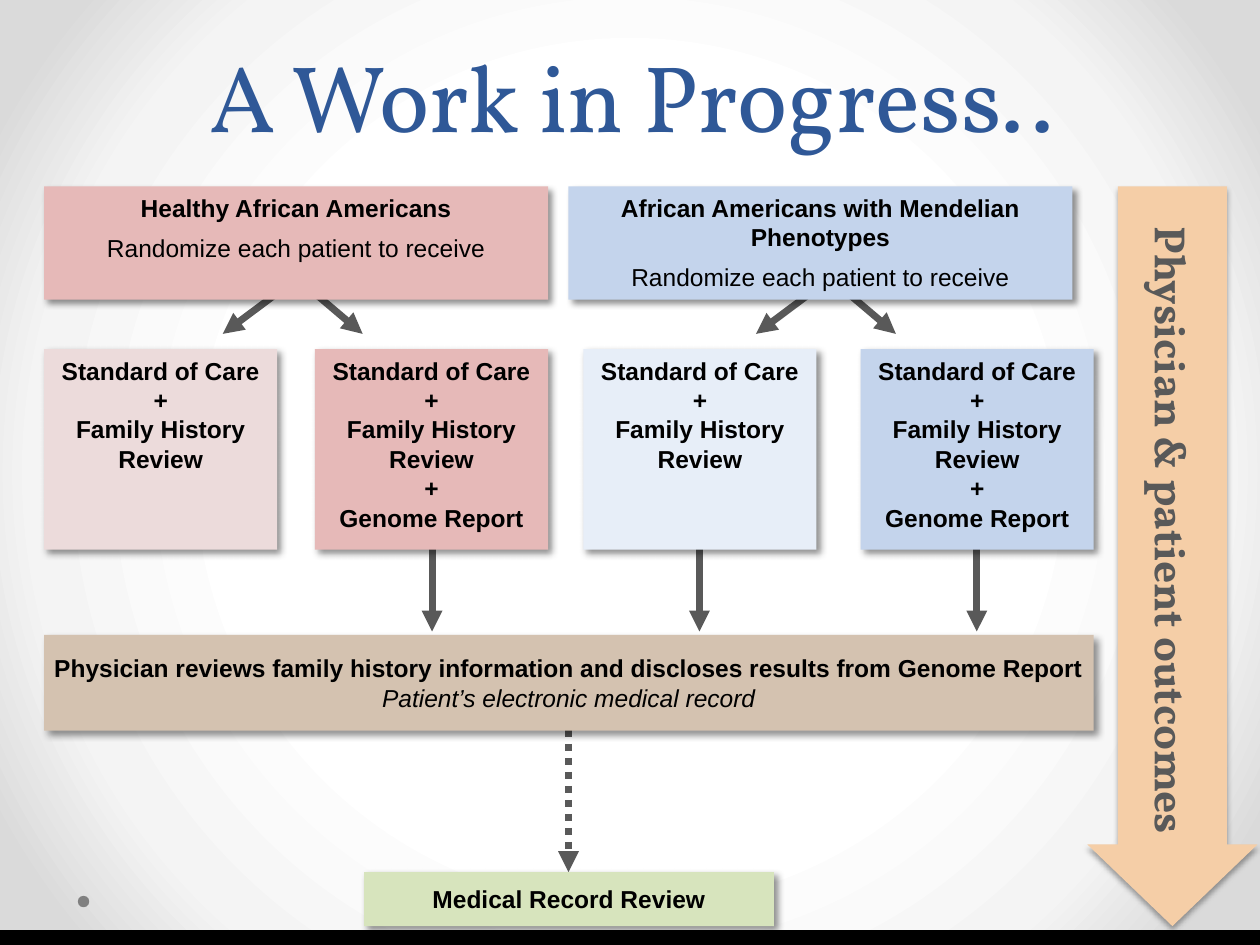
from lxml.etree import SubElement
from pptx import Presentation
from pptx.dml.color import RGBColor
from pptx.enum.dml import MSO_LINE
from pptx.enum.shapes import MSO_CONNECTOR, MSO_SHAPE as SHAPE
from pptx.enum.text import MSO_ANCHOR as ANCHOR, PP_ALIGN
from pptx.oxml.ns import qn
from pptx.util import Cm, Pt

INK, GREY = "000000", "595959"
ROSE, BLUE = "E6B9B8", "C4D4EC"
LEFT = 0.89
GROUP_W, GROUP_TOP, GROUP_H = 10.16, 3.76, 2.28
CARE_W, CARE_TOP, CARE_H = 4.7, 7.04, 4.04
REVIEW_TOP = 12.8
CARE = ["Standard of Care", "+", "Family History Review"]
CARE_GENOME = CARE + ["+", "Genome Report"]
RANDOMIZE = "Randomize each patient to receive"


def color(value):
    return RGBColor.from_string(value)


def add_background(s, stops):
    """Fill the slide with a gradient that spreads from its centre."""
    s.background.fill.solid()
    bg = s.element.find(".//" + qn("p:bgPr"))
    bg.remove(bg[0])
    grad = SubElement(bg, qn("a:gradFill"), rotWithShape="1")
    bg.insert(0, grad)
    gs_list = SubElement(grad, qn("a:gsLst"))
    for percent, value in stops:
        gs = SubElement(gs_list, qn("a:gs"), pos=str(percent * 1000))
        SubElement(gs, qn("a:srgbClr"), val=value)
    centre = SubElement(grad, qn("a:path"), path="circle")
    SubElement(centre, qn("a:fillToRect"), l="50000", t="50000", r="50000", b="50000")


def add_shadow(sp, opacity=43, blur=4, distance=3, angle=45):
    effects = sp._element.spPr.find(qn("a:effectLst"))
    shadow = SubElement(effects, qn("a:outerShdw"), blurRad=str(Pt(blur)),
                        dist=str(Pt(distance)), dir=str(angle * 60000),
                        algn="ctr", rotWithShape="0")
    clr = SubElement(shadow, qn("a:srgbClr"), val=INK)
    SubElement(clr, qn("a:alpha"), val=str(opacity * 1000))


def add_shape(s, bounds, fill, kind=SHAPE.RECTANGLE):
    sp = s.shapes.add_shape(kind, *map(Cm, bounds))
    sp.shadow.inherit = False
    sp.fill.solid()
    sp.fill.fore_color.rgb = color(fill)
    sp.line.fill.background()
    return sp


def format_run(r, size=14, name="Arial", value=INK, bold=True):
    r.font.size, r.font.name, r.font.bold = Pt(size), name, bold
    r.font.color.rgb = color(value)


def add_box(s, bounds, fill, lines, side=0.13, anchor=ANCHOR.TOP):
    """Add a shadowed box with one bold centred paragraph per line."""
    sp = add_shape(s, bounds, fill)
    add_shadow(sp)
    tf = sp.text_frame
    tf.margin_left = tf.margin_right = Cm(side)
    tf.margin_top = tf.margin_bottom = Cm(0.13)
    tf.vertical_anchor = anchor
    tf.text = "\n".join(lines)
    for p in tf.paragraphs:
        p.alignment = PP_ALIGN.CENTER
        format_run(p.runs[0])
    return tf


def add_group(s, x, fill, heading):
    tf = add_box(s, (x, GROUP_TOP, GROUP_W, GROUP_H), fill, [heading, RANDOMIZE])
    p = tf.paragraphs[1]
    p.space_before = Pt(6)
    p.runs[0].font.bold = False


def add_arrow(s, start, end, dash=None):
    line = s.shapes.add_connector(MSO_CONNECTOR.STRAIGHT, *map(Cm, start + end))
    line.line.color.rgb = color(GREY)
    line.line.width = Pt(4)
    if dash:
        line.line.dash_style = dash
    sp_pr = line._element.spPr
    SubElement(sp_pr.find(qn("a:ln")), qn("a:tailEnd"), type="triangle")
    SubElement(sp_pr, qn("a:effectLst"))


def add_title(s, text):
    tf = s.shapes.add_textbox(Cm(1.3), Cm(0), Cm(22.86), Cm(3.18)).text_frame
    tf.word_wrap = True
    tf.vertical_anchor = ANCHOR.BOTTOM
    tf.text = text
    p = tf.paragraphs[0]
    p.alignment = PP_ALIGN.CENTER
    p.line_spacing = Pt(58)
    format_run(p.runs[0], 54, "Vollkorn", "2F5897", False)


def add_outcomes(s, text):
    sp = add_shape(s, (21.92, GROUP_TOP, 3.43, 14.91), "F5CEA7", SHAPE.DOWN_ARROW)
    sp.adjustments[0], sp.adjustments[1] = 0.64, 0.48
    add_shadow(sp, 35, 3.1, 1.8, 90)
    tf = sp.text_frame
    tf.vertical_anchor = ANCHOR.MIDDLE
    tf._txBody.bodyPr.set("vert", "vert")
    tf.text = text
    p = tf.paragraphs[0]
    p.alignment = PP_ALIGN.CENTER
    format_run(p.runs[0], 25, "Vollkorn", GREY)


def add_review(s):
    tf = add_box(s, (LEFT, REVIEW_TOP, 21.16, 1.93), "D4C2B0",
                 ["Physician reviews family history information and discloses "
                  "results from Genome Report "], anchor=ANCHOR.MIDDLE)
    r = tf.paragraphs[0].add_run()
    r.text = "Patient’s electronic medical record"
    format_run(r, bold=False)
    r.font.italic = True


def main():
    prs = Presentation()
    prs.slide_width, prs.slide_height = Cm(25.4), Cm(19.05)
    s = prs.slides.add_slide(prs.slide_layouts[6])

    add_background(s, [(50, "FFFFFF"), (76, "F4F4F4"), (92, "DADADA")])
    add_shape(s, (1.57, 18.06, 0.23, 0.23), "808080", SHAPE.OVAL)
    add_shape(s, (0, 18.75, 25.4, 0.3), INK)

    for x in (8.71, 14.1, 19.69):
        add_arrow(s, (x, 8.92), (x, 12.73))
    add_arrow(s, (11.46, 14.15), (11.46, 17.58), MSO_LINE.ROUND_DOT)
    for x in (5.99, 16.74):
        for dx in (-1.5, 1.32):
            add_arrow(s, (x, 5.61), (x + dx, 6.73))

    add_review(s)
    add_box(s, (7.34, 17.58, 8.26, 1.09), "D7E4BD", ["Medical Record Review"],
            anchor=ANCHOR.MIDDLE)
    for x, fill, lines in ((LEFT, "ECDBDB", CARE), (6.35, ROSE, CARE_GENOME),
                           (11.76, "E7EEF8", CARE), (17.35, BLUE, CARE_GENOME)):
        add_box(s, (x, CARE_TOP, CARE_W, CARE_H), fill, lines, side=0)
    add_group(s, LEFT, ROSE, "Healthy African Americans")
    add_group(s, 11.46, BLUE, "African Americans with Mendelian Phenotypes")
    add_outcomes(s, "Physician & patient outcomes")
    add_title(s, "A Work in Progress..")

    prs.save("out.pptx")


if __name__ == "__main__":
    main()
